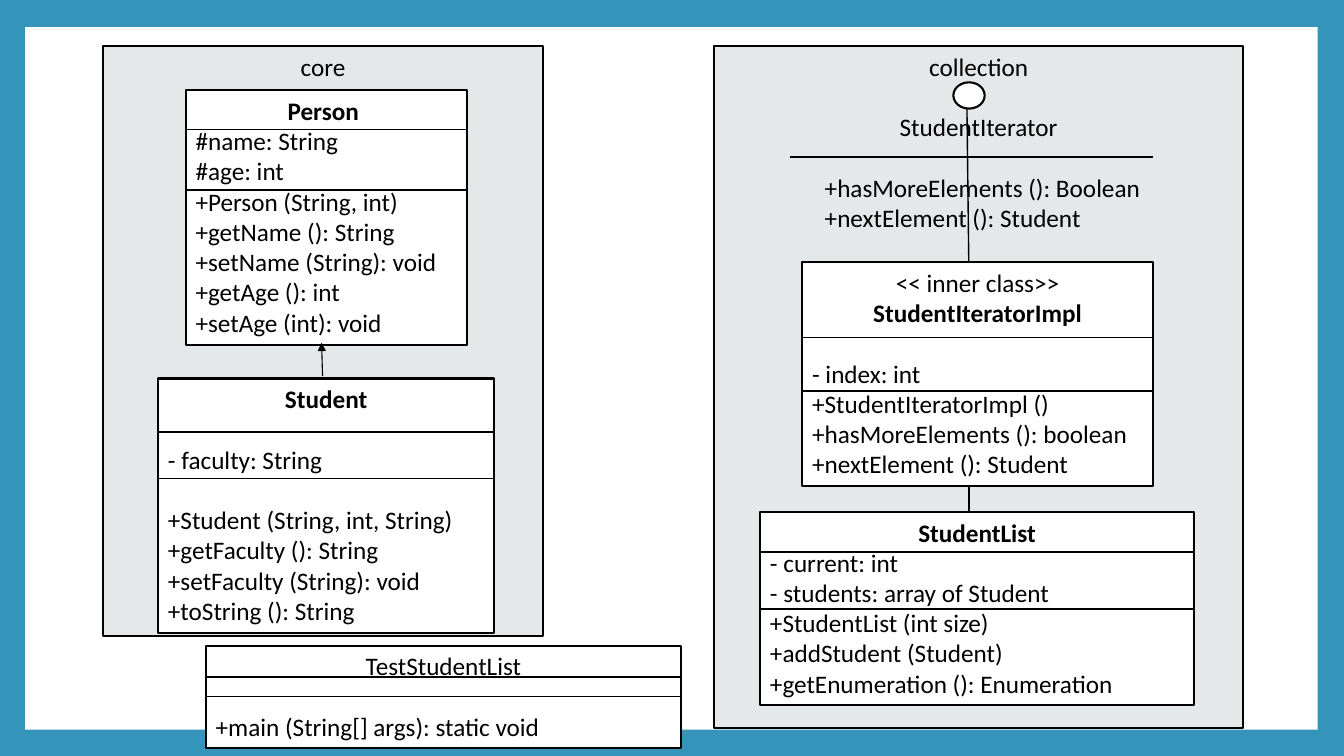
from lxml import etree
from pptx import Presentation
from pptx.dml.color import RGBColor
from pptx.enum.shapes import MSO_CONNECTOR as Connector, MSO_SHAPE as Shape
from pptx.enum.text import MSO_ANCHOR as Anchor, PP_ALIGN as Align
from pptx.oxml.ns import qn
from pptx.util import Pt

LINE_HEIGHT = 21.6


def color(value):
    return RGBColor.from_string(value)


def add_text(shape, text, bold=False, center=False, gap=0, level=0):
    """Write one paragraph; gap is the number of free lines above it."""
    frame = shape.text_frame
    paragraph = frame.paragraphs[0]
    if paragraph.runs:
        paragraph = frame.add_paragraph()
    paragraph.alignment = Align.CENTER if center else Align.LEFT
    paragraph.level = level
    paragraph.space_before = Pt(gap * LINE_HEIGHT)
    run = paragraph.add_run()
    run.text = text
    run.font.name = "Calibri"
    run.font.size = Pt(18)
    run.font.bold = bold
    run.font.color.rgb = color("000000")


presentation = Presentation()
presentation.slide_width = Pt(960)
presentation.slide_height = Pt(540)
slide = presentation.slides.add_slide(presentation.slide_layouts[6])
slide.background.fill.solid()
slide.background.fill.fore_color.rgb = color("3494BA")

# Boxes from back to front: name, preset, left, top, width, height, fill
BOXES = [
    ("page", Shape.RECTANGLE, 18, 19.4, 923.2, 501.8, "FFFFFF"),
    ("collection", Shape.RECTANGLE, 510, 33, 378, 487.2, "E4E8E8"),
    ("StudentIteratorImpl", Shape.RECTANGLE, 573, 187.4, 250.6, 159.8, "FFFFFF"),
    ("StudentList", Shape.RECTANGLE, 542.9, 365.6, 310.2, 138.2, "FFFFFF"),
    ("StudentIterator", Shape.OVAL, 681, 58.8, 22.4, 18.8, "FFFFFF"),
    ("TestStudentList", Shape.RECTANGLE, 147, 461.3, 339.6, 72.7, "FFFFFF"),
    ("core", Shape.RECTANGLE, 73.5, 32.8, 314.6, 421.8, "E4E8E8"),
    ("Person", Shape.RECTANGLE, 132.6, 64.5, 200.8, 181.7, "FFFFFF"),
    ("Student", Shape.RECTANGLE, 112.9, 270.4, 240.2, 181.7, "FFFFFF"),
]
boxes = {}
for name, preset, left, top, width, height, fill in BOXES:
    shape = slide.shapes.add_shape(preset, Pt(left), Pt(top), Pt(width), Pt(height))
    shape.shadow.inherit = False
    shape.fill.solid()
    shape.fill.fore_color.rgb = color(fill)
    if name == "page":
        shape.line.fill.background()
    else:
        shape.line.color.rgb = color("000000")
        shape.line.width = Pt(1.5)
    shape.text_frame.word_wrap = True
    shape.text_frame.vertical_anchor = Anchor.TOP
    boxes[name] = shape

# Package labels and the iterator interface
add_text(boxes["core"], "core", center=True)
add_text(boxes["collection"], "collection", center=True)
add_text(boxes["collection"], "StudentIterator", center=True, gap=1)
add_text(boxes["collection"], "+hasMoreElements (): Boolean", level=2, gap=1)
add_text(boxes["collection"], "+nextElement (): Student", level=2)

# Class headings
add_text(boxes["StudentIteratorImpl"], "<< inner class>>", center=True)
for name in ("StudentIteratorImpl", "StudentList", "Person ", "Student"):
    add_text(boxes[name.strip()], name, bold=True, center=True)
add_text(boxes["TestStudentList"], "TestStudentList", center=True)

# Class members: free lines above attributes and methods, then their texts
MEMBERS = {
    "StudentIteratorImpl": [
        (1, ["- index: int"]),
        (0, ["+StudentIteratorImpl ()", "+hasMoreElements (): boolean",
             "+nextElement (): Student"]),
    ],
    "StudentList": [
        (0, ["- current: int", "- students: array of Student"]),
        (0, ["+StudentList (int size)", "+addStudent (Student)",
             "+getEnumeration (): Enumeration"]),
    ],
    "TestStudentList": [(1, ["+main (String[] args): static void"])],
    "Person": [
        (0, ["#name: String", "#age: int"]),
        (0, ["+Person (String, int)", "+getName (): String",
             "+setName (String): void", "+getAge (): int", "+setAge (int): void"]),
    ],
    "Student": [
        (1, ["- faculty: String"]),
        (1, ["+Student (String, int, String)", "+getFaculty (): String",
             "+setFaculty (String): void", "+toString (): String"]),
    ],
}
for name, sections in MEMBERS.items():
    for gap, members in sections:
        for index, member in enumerate(members):
            add_text(boxes[name], member, gap=0 if index else gap)

# Lines: interface rule and links, then two dividers across each class
lines = [
    (564.5, 112.3, 823.7, 112.3),
    (690.7, 77.8, 692, 187.2),
    (692.1, 347.6, 692.1, 365.8),
]
DIVIDERS = {
    "StudentIteratorImpl": (241.2, 279.2),
    "StudentList": (394.3, 435),
    "TestStudentList": (483.6, 497.5),
    "Person": (92.7, 135.8),
    "Student": (308.5, 342),
}
for name, heights in DIVIDERS.items():
    left, right = boxes[name].left.pt, (boxes[name].left + boxes[name].width) / Pt(1)
    lines += [(left, height, right, height) for height in heights]
lines.append((230.4, 268.6, 229.7, 244.8))  # inheritance

for points in lines:
    connector = slide.shapes.add_connector(Connector.STRAIGHT, *[Pt(value) for value in points])
    connector.line.color.rgb = color("000000")
    connector.line.width = Pt(1)
    etree.SubElement(connector._element.spPr, qn("a:effectLst"))

# Inheritance arrow from Student to Person
connector.line.width = Pt(0.79)
outline = connector._element.spPr.find(qn("a:ln"))
etree.SubElement(outline, qn("a:tailEnd"), type="triangle")

presentation.save("out.pptx")
